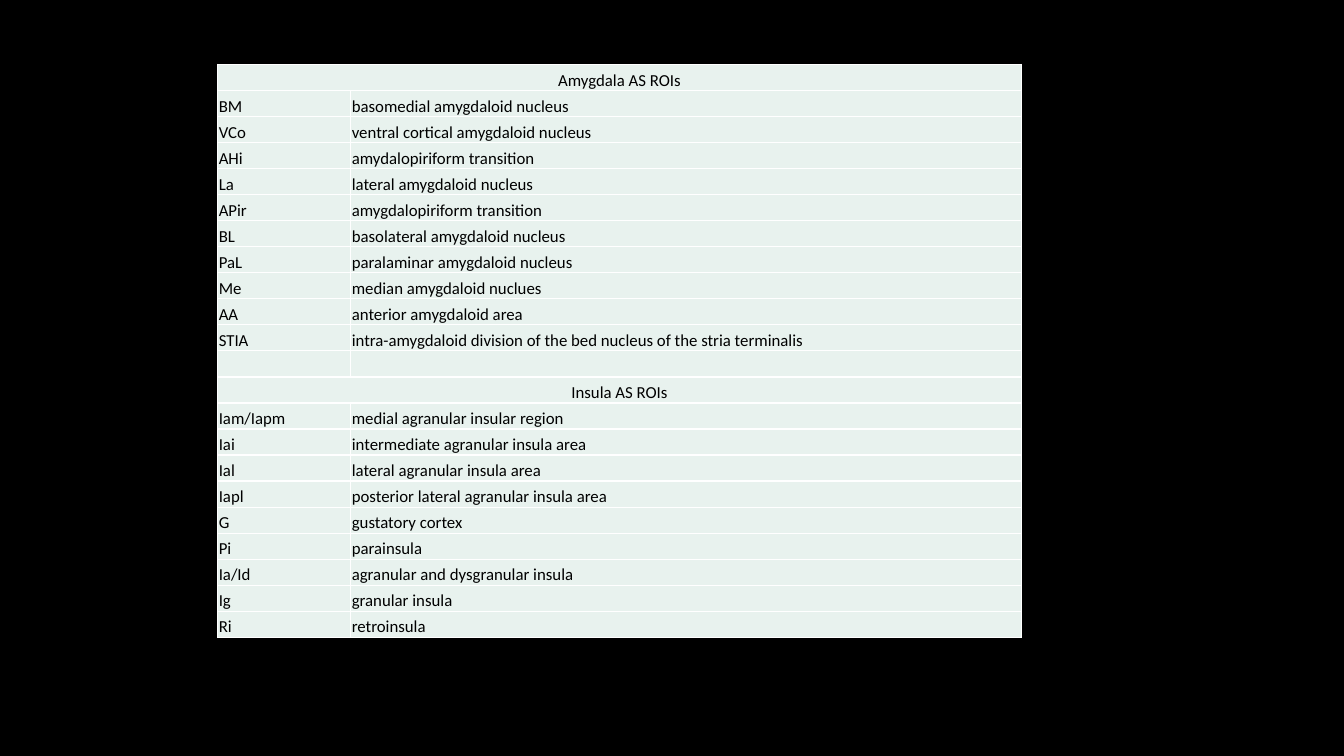
from lxml.etree import SubElement
from pptx import Presentation
from pptx.dml.color import RGBColor
from pptx.enum.text import MSO_ANCHOR, PP_ALIGN
from pptx.oxml.ns import qn
from pptx.util import Inches, Pt

BLACK = RGBColor(0x00, 0x00, 0x00)
WHITE = RGBColor(0xFF, 0xFF, 0xFF)
MINT = RGBColor(0xE8, 0xF2, 0xEE)
FONT = "Calibri"
SIZE = Pt(12)

# One-item rows are headings across both columns
ROWS = [
    ("Amygdala AS ROIs",),
    ("BM", "basomedial amygdaloid nucleus"),
    ("VCo", "ventral cortical amygdaloid nucleus"),
    ("AHi", "amydalopiriform transition"),
    ("La", "lateral amygdaloid nucleus"),
    ("APir", "amygdalopiriform transition"),
    ("BL", "basolateral amygdaloid nucleus"),
    ("PaL", "paralaminar amygdaloid nucleus"),
    ("Me", "median amygdaloid nuclues"),
    ("AA", "anterior amygdaloid area"),
    ("STIA", "intra-amygdaloid division of the bed nucleus of the stria terminalis"),
    ("", ""),
    ("Insula AS ROIs",),
    ("Iam/Iapm", "medial agranular insular region"),
    ("Iai", "intermediate agranular insula area"),
    ("Ial", "lateral agranular insula area"),
    ("Iapl", "posterior lateral agranular insula area"),
    ("G", "gustatory cortex"),
    ("Pi", "parainsula"),
    ("Ia/Id", "agranular and dysgranular insula"),
    ("Ig", "granular insula"),
    ("Ri", "retroinsula"),
]


def style_cell(cell):
    cell.margin_left = cell.margin_right = cell.margin_top = Inches(0.01)
    cell.margin_bottom = 0
    cell.vertical_anchor = MSO_ANCHOR.BOTTOM
    # Borders come before the fill in the cell's XML
    props = cell._tc.get_or_add_tcPr()
    for side in ("a:lnL", "a:lnR", "a:lnT", "a:lnB"):
        line = SubElement(props, qn(side), w=str(Pt(1)))
        paint = SubElement(line, qn("a:solidFill"))
        SubElement(paint, qn("a:srgbClr"), val=str(WHITE))
    cell.fill.solid()
    cell.fill.fore_color.rgb = MINT


def write_cell(cell, text, align):
    para = cell.text_frame.paragraphs[0]
    para.alignment = align
    if text:
        run = para.add_run()
        run.text = text
        run.font.name = FONT
        run.font.size = SIZE
        run.font.color.rgb = BLACK
    else:
        # Keeps an empty row as low as the others
        SubElement(para._p, qn("a:endParaRPr"), sz=str(int(SIZE.pt * 100)))


def add_regions(slide, left, top, width, height):
    frame = slide.shapes.add_table(len(ROWS), 2, left, top, width, height)
    table = frame.table
    table.first_row = table.horz_banding = False
    table.columns[0].width = Inches(1.32)
    table.columns[1].width = width - Inches(1.32)
    for row in table.rows:
        row.height = height // len(ROWS)
        for cell in row.cells:
            style_cell(cell)
    for r, texts in enumerate(ROWS):
        head = len(texts) == 1
        if head:
            table.cell(r, 0).merge(table.cell(r, 1))
        for c, text in enumerate(texts):
            align = PP_ALIGN.CENTER if head else PP_ALIGN.LEFT
            write_cell(table.cell(r, c), text, align)


def main():
    deck = Presentation()
    deck.slide_width = Inches(13.33)
    deck.slide_height = Inches(7.5)
    slide = deck.slides.add_slide(deck.slide_layouts[6])
    # Black backdrop
    slide.background.fill.solid()
    slide.background.fill.fore_color.rgb = BLACK
    # Table of brain regions
    add_regions(slide, Inches(2.16), Inches(0.64), Inches(7.97), Inches(5.69))
    deck.save("out.pptx")


if __name__ == "__main__":
    main()
